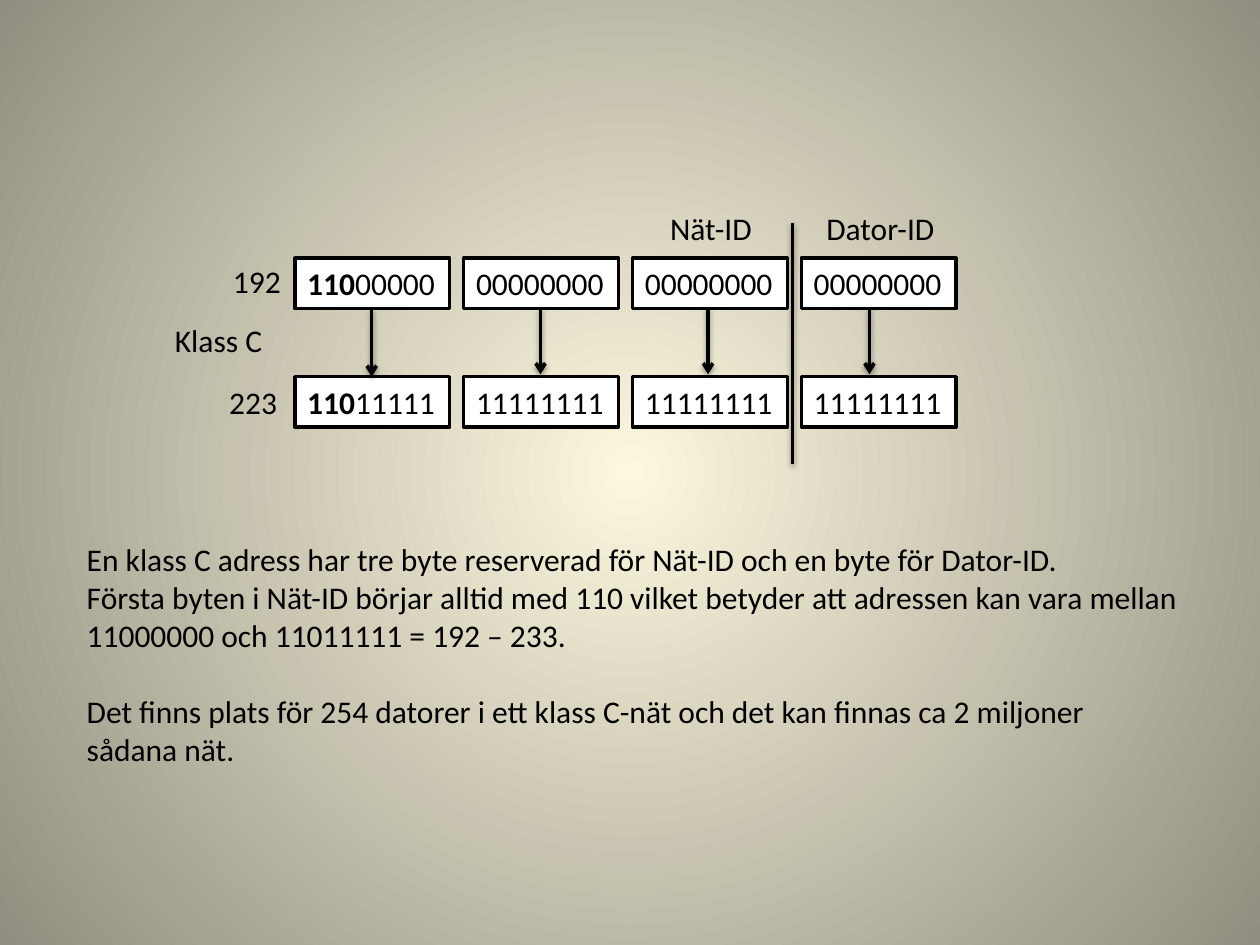
"""Build a slide explaining the address range of a class C network."""
from dataclasses import dataclass

from lxml import etree
from pptx import Presentation
from pptx import util as u
from pptx.dml.color import RGBColor
from pptx.enum import shapes, text
from pptx.oxml.ns import qn


@dataclass(frozen=True)
class Theme:
    font: str = "Calibri"
    size: u.Length = u.Pt(18)
    blank_line: u.Length = u.Pt(22)
    stroke: u.Length = u.Pt(2)
    ink: RGBColor = RGBColor(0x00, 0x00, 0x00)
    paper: RGBColor = RGBColor(0xFF, 0xFF, 0xFF)
    glow: RGBColor = RGBColor(0xFC, 0xF7, 0xDD)
    edge: RGBColor = RGBColor(0x91, 0x8E, 0x81)


@dataclass(frozen=True)
class Label:
    words: str
    left: float
    top: float
    width: float
    height: float = 0.4


@dataclass(frozen=True)
class ByteRow:
    top: float
    prefix: str
    digit: str


@dataclass(frozen=True)
class Stroke:
    x: float
    top: float
    bottom: float
    arrow: bool = True


THEME = Theme()
BYTE_LEFT, BYTE_STEP, BYTE_WIDTH, BYTE_COUNT = 2.34, 1.34, 1.23, 4
BYTE_ROWS = [ByteRow(2.05, "110", "0"), ByteRow(2.99, "110", "1")]
LABELS = [
    Label("Klass C", 1.29, 2.5, 0.9),
    Label("192", 1.75, 2.03, 0.59),
    Label("223", 1.72, 2.99, 0.59),
    Label("Nät-ID", 5.22, 1.61, 0.86),
    Label("Dator-ID", 6.46, 1.61, 1.08),
]
STROKES = [
    Stroke(2.95, 2.45, 2.99),
    *(Stroke(x, 2.44, 2.97) for x in (4.29, 5.62, 6.9)),
    Stroke(6.29, 1.77, 3.68, arrow=False),
]
EXPLANATION = Label(
    "En klass C adress har tre byte reserverad för Nät-ID och en byte för Dator-ID.\n"
    "Första byten i Nät-ID börjar alltid med 110 vilket betyder att adressen kan vara mellan\n"
    "11000000 och 11011111 = 192 – 233.\n"
    "Det finns plats för 254 datorer i ett klass C-nät och det kan finnas ca 2 miljoner\n"
    "sådana nät.",
    0.59, 4.24, 8.97, 2.22,
)
PARAGRAPH_AFTER_GAP = 3


def paint_background(page) -> None:
    fill = page.background.fill
    fill.gradient()
    for stop, color, position in zip(fill.gradient_stops, (THEME.glow, THEME.edge), (0, 1)):
        stop.color.rgb = color
        stop.position = position
    gradient = page.element.find(".//" + qn("a:gradFill"))
    gradient.remove(gradient.find(qn("a:lin")))
    radial = etree.SubElement(gradient, qn("a:path"), path="circle")
    etree.SubElement(radial, qn("a:fillToRect"), l="50000", t="50000", r="50000", b="50000")


def add_label(page, label: Label):
    box = page.shapes.add_textbox(
        u.Inches(label.left), u.Inches(label.top), u.Inches(label.width), u.Inches(label.height)
    )
    frame = box.text_frame
    frame.text = label.words
    frame.word_wrap = False
    frame.auto_size = text.MSO_AUTO_SIZE.SHAPE_TO_FIT_TEXT
    for para in frame.paragraphs:
        for span in para.runs:
            style_span(span)
    return box


def style_span(span, bold: bool = False) -> None:
    span.font.name = THEME.font
    span.font.size = THEME.size
    span.font.color.rgb = THEME.ink
    span.font.bold = bold


def add_byte(page, row: ByteRow, column: int) -> None:
    prefix = row.prefix if column == 0 else ""
    rest = row.digit * (8 - len(prefix))
    left = BYTE_LEFT + column * BYTE_STEP
    box = add_label(page, Label(prefix or rest, left, row.top, BYTE_WIDTH))
    box.fill.solid()
    box.fill.fore_color.rgb = THEME.paper
    box.line.color.rgb = THEME.ink
    box.line.width = THEME.stroke
    if prefix:
        para = box.text_frame.paragraphs[0]
        para.runs[0].font.bold = True
        span = para.add_run()
        span.text = rest
        style_span(span)


def add_stroke(page, stroke: Stroke) -> None:
    x = u.Inches(stroke.x)
    line = page.shapes.add_connector(
        shapes.MSO_CONNECTOR.STRAIGHT, x, u.Inches(stroke.top), x, u.Inches(stroke.bottom)
    )
    line.line.color.rgb = THEME.ink
    line.line.width = THEME.stroke
    properties = line.element.spPr
    if stroke.arrow:
        etree.SubElement(properties.find(qn("a:ln")), qn("a:tailEnd"), type="arrow")
    effects = etree.SubElement(properties, qn("a:effectLst"))
    shadow = etree.SubElement(
        effects, qn("a:outerShdw"), blurRad="40000", dist="20000", dir="5400000", rotWithShape="0"
    )
    color = etree.SubElement(shadow, qn("a:srgbClr"), val=str(THEME.ink))
    etree.SubElement(color, qn("a:alpha"), val="38000")


def main() -> None:
    deck = Presentation()
    deck.slide_width, deck.slide_height = u.Inches(10), u.Inches(7.5)
    page = deck.slides.add_slide(deck.slide_layouts[6])
    paint_background(page)
    for column in range(BYTE_COUNT):
        for row in BYTE_ROWS:
            add_byte(page, row, column)
    for stroke in STROKES:
        add_stroke(page, stroke)
    for label in LABELS:
        add_label(page, label)
    explanation = add_label(page, EXPLANATION)
    explanation.text_frame.paragraphs[PARAGRAPH_AFTER_GAP].space_before = THEME.blank_line
    deck.save("out.pptx")


if __name__ == "__main__":
    main()
